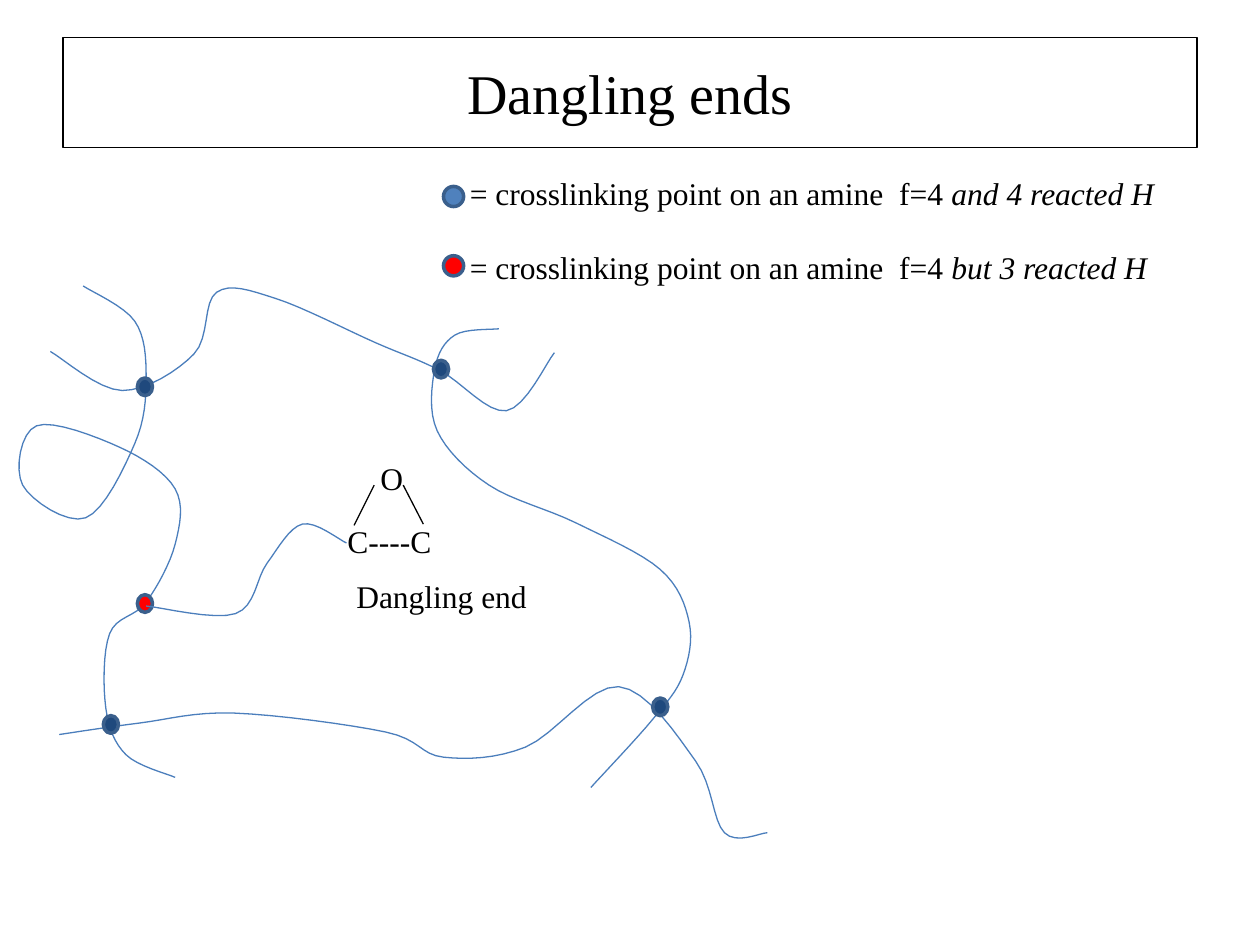
from dataclasses import dataclass

from lxml.etree import SubElement
from pptx import Presentation
from pptx.dml.color import RGBColor
from pptx.enum.shapes import MSO_CONNECTOR as Connector, MSO_SHAPE as Preset
from pptx.enum.text import MSO_ANCHOR as Anchor, MSO_AUTO_SIZE as AutoSize, PP_ALIGN as Align
from pptx.oxml.ns import qn
from pptx.shapes.shapetree import GroupShapes
from pptx.util import Emu, Inches, Pt

COLUMNS, ROWS = 100, 75
CELL = Inches(10) // COLUMNS
FONT = "Times New Roman"
BLACK, RED = "000000", "FF0000"
STRAND, RIM, AMINE, LEGEND_BLUE = "4B7EBC", "3A5F8C", "1F497D", "4F81BD"
SMOOTHING_STEPS = 8

Point = tuple[float, float]


@dataclass(frozen=True)
class Dot:
    column: float
    row: float
    width: float
    height: float
    fill: str


@dataclass(frozen=True)
class Label:
    column: float
    row: float
    width: float
    height: float
    lines: tuple[tuple[str, ...], ...]


LOOPED_STRAND = ((6.6, 22.7), (10.7, 25.5), (11.6, 30), (10.7, 35.2), (6.8, 41.1),
                 (1.8, 38.5), (2.9, 33.8), (9.5, 35.5), (13.9, 38.8), (13.9, 43.2),
                 (11.6, 47.8), (8.7, 50.3), (8.4, 56.2), (10, 59.9), (13.9, 61.7))
UPPER_STRAND = ((4, 27.9), (9.7, 31), (15.4, 28.1), (17.2, 23.2), (21.9, 23.7),
                (29.8, 27.2), (34.9, 29.4), (40.2, 32.6), (44, 28))
RIGHT_STRAND = ((39.6, 26.1), (36.1, 26.6), (34.5, 29.3), (34.7, 34.2), (38.8, 38.5),
                (45.7, 41.5), (52.4, 45.2), (54.7, 49.4), (54.2, 53.6), (51.8, 57.1),
                (46.9, 62.5))
LOWER_STRAND = ((4.7, 58.3), (11, 57.4), (18.6, 56.6), (30.6, 58.1), (35.2, 60.1),
                (41.7, 59.3), (49.1, 54.5), (55.2, 60.4), (57.5, 66.1), (60.9, 66.1))
DANGLING_STRAND = ((11.6, 48.1), (18.7, 48.7), (21.2, 44.7), (24, 41.6), (27.5, 43.1))

AMINE_CENTERS = ((11.5, 30.7), (35, 29.3), (52.4, 56.1), (8.8, 57.5))
UNREACTED_CENTER = (11.5, 47.9)

CROSSLINK = "= crosslinking point on an amine  f=4 "
LEGEND = Label(36.3, 13.3, 56.5, 10.1,
               ((CROSSLINK, "and 4 reacted H"), (CROSSLINK, "but 3 reacted H")))
LEGEND_DOTS = (Dot(36, 15.6, 1.6, 1.6, LEGEND_BLUE), Dot(36, 21.1, 1.6, 1.6, RED))
DANGLING_END = Label(27.3, 45.3, 15.7, 4, (("Dangling end",),))
CARBONS = Label(26.6, 40.9, 8.7, 4, (("C----C",),))
OXYGEN = Label(29.2, 35.9, 3.8, 4, (("O",),))
EPOXIDE_BONDS = (((28.1, 41.7), (29.7, 38.5)), ((33.6, 41.6), (32, 38.5)))


def color(hex_value: str) -> RGBColor:
    return RGBColor.from_string(hex_value)


def grid(*cells: float) -> tuple[Emu, ...]:
    return tuple(Emu(round(cell * CELL)) for cell in cells)


def set_line(shape, hex_value: str, width: float) -> None:
    shape.line.color.rgb = color(hex_value)
    shape.line.width = Pt(width)


def format_run(run, size: float, italic: bool = False) -> None:
    run.font.name = FONT
    run.font.size = Pt(size)
    run.font.italic = italic
    run.font.color.rgb = color(BLACK)


def smooth(points: tuple[Point, ...]) -> list[Point]:
    padded = (points[0], *points, points[-1])
    curve = [points[0]]
    for window in zip(padded, padded[1:], padded[2:], padded[3:]):
        for step in range(1, SMOOTHING_STEPS + 1):
            t = step / SMOOTHING_STEPS
            curve.append(tuple(
                b + t * (c - a) / 2
                + t ** 2 * (2 * a - 5 * b + 4 * c - d) / 2
                + t ** 3 * (3 * b - a - 3 * c + d) / 2
                for a, b, c, d in zip(*window)
            ))
    return curve


def draw_strand(shapes: GroupShapes, points: tuple[Point, ...]) -> None:
    start, *rest = [grid(*point) for point in smooth(points)]
    builder = shapes.build_freeform(*start)
    builder.add_line_segments(rest, close=False)
    strand = builder.convert_to_shape()
    strand.shadow.inherit = False
    strand.fill.background()
    set_line(strand, STRAND, 0.75)


def draw_dot(shapes: GroupShapes, dot: Dot) -> None:
    left, top = dot.column - dot.width / 2, dot.row - dot.height / 2
    shape = shapes.add_shape(Preset.OVAL, *grid(left, top, dot.width, dot.height))
    shape.shadow.inherit = False
    shape.fill.solid()
    shape.fill.fore_color.rgb = color(dot.fill)
    set_line(shape, RIM, 2)


def draw_bond(shapes: GroupShapes, start: Point, end: Point) -> None:
    bond = shapes.add_connector(Connector.STRAIGHT, *grid(*start, *end))
    set_line(bond, BLACK, 0.75)
    SubElement(bond._element.spPr, qn("a:effectLst"))


def draw_label(shapes, label: Label, gap: float = 0) -> None:
    box = shapes.add_textbox(*grid(label.column, label.row, label.width, label.height))
    frame = box.text_frame
    frame.word_wrap = False
    frame.auto_size = AutoSize.SHAPE_TO_FIT_TEXT
    for index, pieces in enumerate(label.lines):
        paragraph = frame.add_paragraph() if index else frame.paragraphs[0]
        paragraph.space_before = Pt(gap if index else 0)
        for position, piece in enumerate(pieces):
            run = paragraph.add_run()
            run.text = piece
            format_run(run, 18, italic=position > 0)


def draw_title(slide, text: str) -> None:
    title = slide.shapes.title
    title.left, title.top, title.width, title.height = grid(5, 3, 90, 8.7)
    set_line(title, BLACK, 0.75)
    frame = title.text_frame
    frame.text = text
    frame.vertical_anchor = Anchor.MIDDLE
    paragraph = frame.paragraphs[0]
    paragraph.alignment = Align.CENTER
    format_run(paragraph.runs[0], 32)


def main() -> None:
    presentation = Presentation()
    presentation.slide_width, presentation.slide_height = grid(COLUMNS, ROWS)
    slide = presentation.slides.add_slide(presentation.slide_layouts.get_by_name("Title Only"))
    draw_title(slide, "Dangling ends")

    network = slide.shapes.add_group_shape().shapes
    for strand in (LOOPED_STRAND, UPPER_STRAND, RIGHT_STRAND, LOWER_STRAND):
        draw_strand(network, strand)
    for center in AMINE_CENTERS:
        draw_dot(network, Dot(*center, 1.2, 1.4, AMINE))
    draw_dot(network, Dot(*UNREACTED_CENTER, 1.2, 1.4, RED))
    draw_strand(network, DANGLING_STRAND)
    draw_label(slide.shapes, DANGLING_END)

    epoxide = slide.shapes.add_group_shape().shapes
    draw_label(epoxide, CARBONS)
    for bond in EPOXIDE_BONDS:
        draw_bond(epoxide, *bond)
    draw_label(epoxide, OXYGEN)

    legend = slide.shapes.add_group_shape().shapes
    draw_label(legend, LEGEND, gap=21)
    for dot in LEGEND_DOTS:
        draw_dot(legend, dot)

    presentation.save("out.pptx")


if __name__ == "__main__":
    main()
